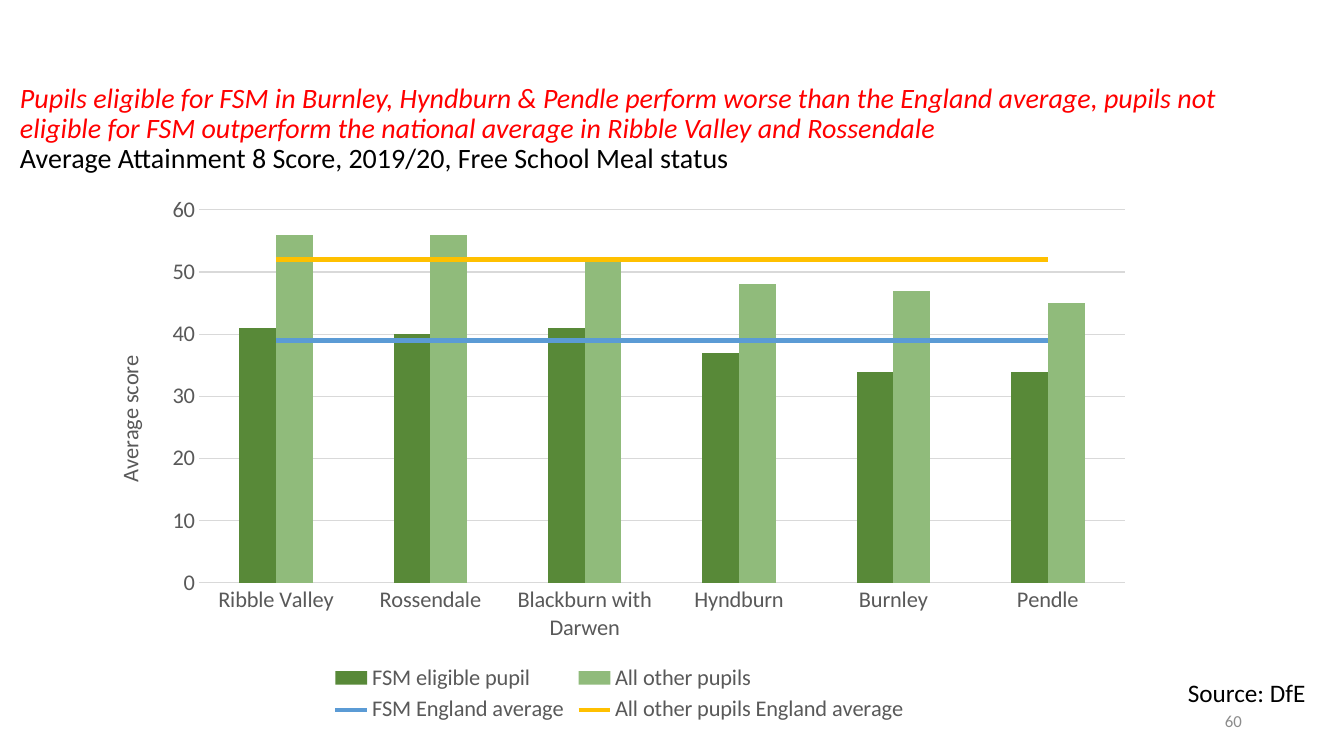
from pptx import Presentation
from pptx.chart.data import CategoryChartData
from pptx.dml.color import RGBColor
from pptx.enum.chart import XL_CHART_TYPE, XL_LEGEND_POSITION, XL_MARKER_STYLE, XL_TICK_MARK
from pptx.enum.text import MSO_ANCHOR, MSO_AUTO_SIZE, PP_ALIGN
from pptx.oxml import parse_xml
from pptx.oxml.ns import nsdecls, qn
from pptx.util import Cm, Pt

FACE = "Calibri"
GREY = "595959"
RULE = "D9D9D9"
AREAS = ["Ribble Valley", "Rossendale", "Blackburn with Darwen",
         "Hyndburn", "Burnley", "Pendle"]
BARS = [
    ("FSM eligible pupil", "588938", [41, 40, 41, 37, 34, 34]),
    ("All other pupils", "90BB7B", [56, 56, 52, 48, 47, 45]),
]
MEANS = [
    ("FSM England average", "5B9BD5", [39] * len(AREAS)),
    ("All other pupils England average", "FFC000", [52] * len(AREAS)),
]


def paint(text):
    return RGBColor.from_string(text)


def style(font, size, color, italic=None):
    font.name = FACE
    font.size = Pt(size)
    font.color.rgb = paint(color)
    font.bold = False
    font.italic = italic


def stroke(line, color, width):
    line.color.rgb = paint(color)
    line.width = Pt(width)


def add_title(slide, claim, topic):
    title = slide.shapes.title
    title.left, title.top = Cm(0.25), Cm(1.85)
    title.width, title.height = Cm(31.78), Cm(2.82)
    frame = title.text_frame
    frame.word_wrap = True
    frame.auto_size = MSO_AUTO_SIZE.NONE
    frame.vertical_anchor = MSO_ANCHOR.MIDDLE
    para = frame.paragraphs[0]
    para.alignment = PP_ALIGN.LEFT
    para.line_spacing = 0.9
    lead = para.add_run()
    lead.text = claim
    style(lead.font, 20, "FF0000", True)
    para.add_line_break()
    rest = para.add_run()
    rest.text = topic
    style(rest.font, 20, "000000", False)


def add_note(slide, text, left, top, width, size, color):
    box = slide.shapes.add_textbox(Cm(left), Cm(top), Cm(width), Cm(1.02))
    frame = box.text_frame
    frame.word_wrap = True
    frame.vertical_anchor = MSO_ANCHOR.MIDDLE
    para = frame.paragraphs[0]
    para.text = text
    para.alignment = PP_ALIGN.RIGHT
    style(para.font, size, color)


def split_lines(chart):
    columns = chart._chartSpace.find(".//" + qn("c:barChart"))
    lines = parse_xml(
        f'<c:lineChart {nsdecls("c")}><c:grouping val="standard"/>'
        '<c:varyColors val="0"/><c:marker val="1"/></c:lineChart>')
    columns.addnext(lines)
    mark = lines.find(qn("c:marker"))
    for series in columns.findall(qn("c:ser"))[len(BARS):]:
        invert = series.find(qn("c:invertIfNegative"))
        if invert is not None:
            series.remove(invert)
        mark.addprevious(series)
    for axis in columns.findall(qn("c:axId")):
        lines.append(parse_xml(
            f'<c:axId {nsdecls("c")} val="{axis.get("val")}"/>'))


def style_axes(chart):
    for axis in (chart.category_axis, chart.value_axis):
        axis.major_tick_mark = XL_TICK_MARK.NONE
        axis.minor_tick_mark = XL_TICK_MARK.NONE
        style(axis.tick_labels.font, 16, GREY)
    stroke(chart.category_axis.format.line, RULE, 0.75)
    value = chart.value_axis
    value.minimum_scale, value.maximum_scale, value.major_unit = 0, 60, 10
    value.format.line.fill.background()
    stroke(value.major_gridlines.format.line, RULE, 0.75)
    para = value.axis_title.text_frame.paragraphs[0]
    para.text = "Average score"
    style(para.font, 16, GREY)


def add_scores(slide):
    data = CategoryChartData(number_format="0")
    data.categories = AREAS
    for name, _, scores in BARS + MEANS:
        data.add_series(name, scores)
    chart = slide.shapes.add_chart(
        XL_CHART_TYPE.COLUMN_CLUSTERED,
        Cm(2.34), Cm(4.67), Cm(26.54), Cm(13.67), data).chart
    style(chart.font, 16, "000000")
    chart.has_title = False
    split_lines(chart)
    columns, lines = chart.plots
    columns.gap_width = 219
    columns.vary_by_categories = False
    for series, (_, color, _) in zip(columns.series, BARS):
        series.format.fill.solid()
        series.format.fill.fore_color.rgb = paint(color)
    for series, (_, color, _) in zip(lines.series, MEANS):
        stroke(series.format.line, color, 3)
        series.marker.style = XL_MARKER_STYLE.NONE
        series.smooth = False
    style_axes(chart)
    chart.has_legend = True
    chart.legend.position = XL_LEGEND_POSITION.BOTTOM
    chart.legend.include_in_layout = False
    style(chart.legend.font, 16, GREY)


def main():
    deck = Presentation()
    deck.slide_width, deck.slide_height = Cm(33.87), Cm(19.05)
    slide = deck.slides.add_slide(deck.slide_layouts[5])
    add_title(
        slide,
        "Pupils eligible for FSM in Burnley, Hyndburn & Pendle perform worse "
        "than the England average, pupils not eligible for FSM outperform "
        "the national average in Ribble Valley and Rossendale",
        "Average Attainment 8 Score, 2019/20, Free School Meal status")
    add_note(slide, "60", 23.93, 17.65, 7.62, 12, "8C8C8C")
    add_note(slide, "Source: DfE", 28.35, 16.94, 4.8, 18, "000000")
    add_scores(slide)
    deck.save("out.pptx")


if __name__ == "__main__":
    main()
